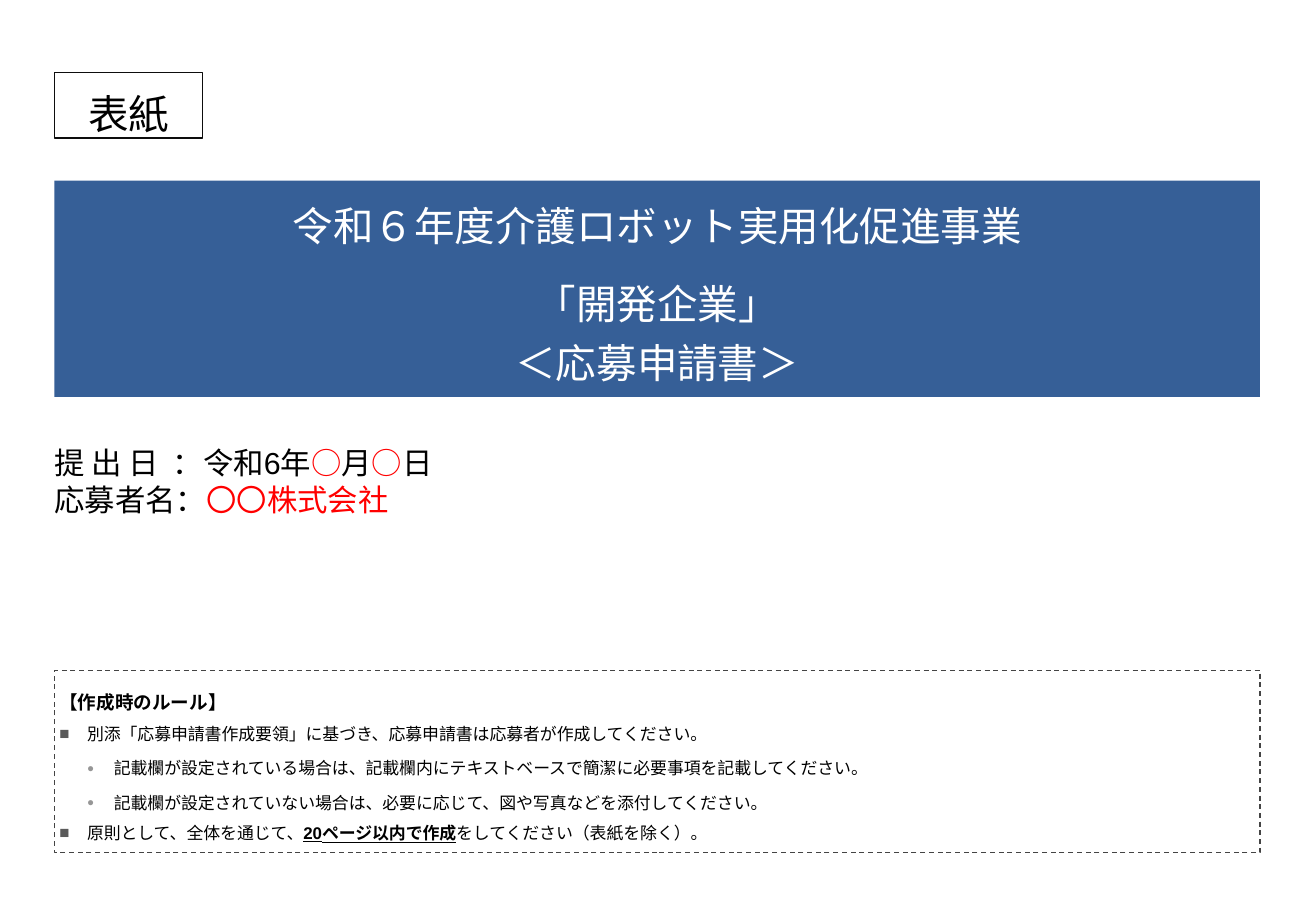
from lxml import etree
from pptx import Presentation
from pptx.dml.color import RGBColor
from pptx.enum.dml import MSO_LINE
from pptx.enum.shapes import MSO_SHAPE
from pptx.enum.text import MSO_ANCHOR, MSO_AUTO_SIZE, PP_ALIGN
from pptx.oxml.ns import qn
from pptx.util import Cm, Pt

RECTANGLE = MSO_SHAPE.RECTANGLE
LEFT, CENTER = PP_ALIGN.LEFT, PP_ALIGN.CENTER
TOP, MIDDLE = MSO_ANCHOR.TOP, MSO_ANCHOR.MIDDLE
GROW, FIXED = MSO_AUTO_SIZE.SHAPE_TO_FIT_TEXT, MSO_AUTO_SIZE.NONE
DASH = MSO_LINE.DASH

COLORS = {"black": "000000", "white": "FFFFFF", "red": "FF0000",
          "banner": "365F97", "label": "0D0D0D", "rules": "444444",
          "square": "5A5A5A", "dot": "969696"}
MARGIN, CONTENT_WIDTH = 1.14, 25.2


def color(name):
    return RGBColor.from_string(COLORS[name])


class CoverSlide:
    font_name = "Arial"

    def __init__(self, presentation):
        self.slide = presentation.slides.add_slide(presentation.slide_layouts[6])

    def frame(self, shape, insets, anchor=TOP, auto_size=FIXED, wrap=True):
        """Set up the text frame; insets are left, top, right, bottom."""
        text_frame = shape.text_frame
        (text_frame.margin_left, text_frame.margin_top,
         text_frame.margin_right, text_frame.margin_bottom) = map(Cm, insets)
        text_frame.vertical_anchor = anchor
        text_frame.word_wrap = wrap
        text_frame.auto_size = auto_size
        return text_frame

    def text_box(self, top, height, insets, **options):
        shape = self.slide.shapes.add_textbox(
            Cm(MARGIN), Cm(top), Cm(CONTENT_WIDTH), Cm(height))
        return self.frame(shape, insets, **options)

    def box(self, top, width, height, insets, fill=None, line=None, dash=None, **options):
        shape = self.slide.shapes.add_shape(
            RECTANGLE, Cm(MARGIN), Cm(top), Cm(width), Cm(height))
        shape.shadow.inherit = False
        if fill:
            shape.fill.solid()
            shape.fill.fore_color.rgb = color(fill)
        else:
            shape.fill.background()
        if line:
            shape.line.color.rgb = color(line)
            shape.line.width = Pt(0.75)
            shape.line.dash_style = dash
        else:
            shape.line.fill.background()
        return self.frame(shape, insets, **options)

    def paragraph(self, text_frame, pieces, size, align=LEFT, spacing=None,
                  before=None, indent=None, bullet=None):
        """Each piece is (text, color name, is strong, is underlined)."""
        paragraph = text_frame.paragraphs[0]
        if paragraph.runs:
            paragraph = text_frame.add_paragraph()
        paragraph.alignment = align
        paragraph.line_spacing = spacing
        paragraph.space_before = before
        for text, ink, bold, underline in pieces:
            for number, line in enumerate(text.split("\n")):
                if number:
                    paragraph.add_line_break()
                run = paragraph.add_run()
                run.text = line
                run.font.name = self.font_name
                run.font.size = Pt(size)
                run.font.bold = bold
                run.font.underline = underline
                run.font.color.rgb = color(ink)
        properties = paragraph._p.get_or_add_pPr()
        if indent:
            left, hanging = indent
            properties.set("marL", str(Cm(left)))
            properties.set("indent", str(-Cm(hanging)))
        if bullet:
            self.bullet(properties, *bullet)
        return paragraph

    def bullet(self, properties, character, ink, percent):
        bullet_color = etree.SubElement(properties, qn("a:buClr"))
        etree.SubElement(bullet_color, qn("a:srgbClr"), val=COLORS[ink])
        etree.SubElement(properties, qn("a:buSzPct"), val=str(percent * 1000))
        etree.SubElement(properties, qn("a:buFont"), typeface=self.font_name)
        etree.SubElement(properties, qn("a:buChar"), char=character)


def plain(text, ink="black"):
    return (text, ink, False, False)


def main():
    presentation = Presentation()
    presentation.slide_width, presentation.slide_height = Cm(27.51), Cm(19.05)
    cover = CoverSlide(presentation)

    # Submission date and applicant
    applicant = cover.text_box(9.19, 1.78, (0, 0.1, 0, 0.13), auto_size=GROW)
    for pieces in (
        [plain("提 出 日  ：令和6年"), plain("○", "red"), plain("月"),
         plain("○", "red"), plain("日")],
        [plain("応募者名："), plain("〇〇株式会社", "red")],
    ):
        cover.paragraph(applicant, pieces, 18, indent=(0.74, 0.74))

    # Rules for filling in the form
    rules = cover.box(14.02, CONTENT_WIDTH, 3.81, (0.1,) * 4,
                      line="rules", dash=DASH, anchor=MIDDLE)
    cover.paragraph(rules, [("【作成時のルール】", "black", True, False)], 11, spacing=1.5)
    main_rule = {"spacing": 1.5, "indent": (0.58, 0.58), "bullet": ("■", "square", 100)}
    sub_rule = {"spacing": 1.7, "indent": (1.14, 0.56), "bullet": ("●", "dot", 70)}
    for pieces, style in (
        ([plain("別添「応募申請書作成要領」に基づき、応募申請書は応募者が作成してください。")],
         main_rule),
        ([plain("記載欄が設定されている場合は、記載欄内にテキストベースで簡潔に必要事項を記載してください。")],
         sub_rule),
        ([plain("記載欄が設定されていない場合は、必要に応じて、図や写真などを添付してください。")],
         sub_rule),
        ([plain("原則として、全体を通じて、"),
          ("20ページ以内で作成", "black", True, True),
          plain("をしてください（表紙を除く）。")], main_rule),
    ):
        paragraph = cover.paragraph(rules, pieces, 10, **style)
        paragraph.level = 1 if style is sub_rule else 0

    # Cover label and title banner
    heading = {"size": 24, "align": CENTER, "spacing": 1.2, "before": Pt(12)}
    label = cover.box(1.52, 3.1, 1.37, (0.25, 0.13, 0.25, 0.13),
                      line="label", auto_size=GROW)
    cover.paragraph(label, [plain("表紙")], **heading)
    banner = cover.box(3.78, CONTENT_WIDTH, 4.52, (0.05,) * 4,
                       fill="banner", anchor=MIDDLE, wrap=False)
    for title in ("令和６年度介護ロボット実用化促進事業", "「開発企業」\n＜応募申請書＞"):
        cover.paragraph(banner, [plain(title, "white")], **heading)

    presentation.save("out.pptx")


if __name__ == "__main__":
    main()
